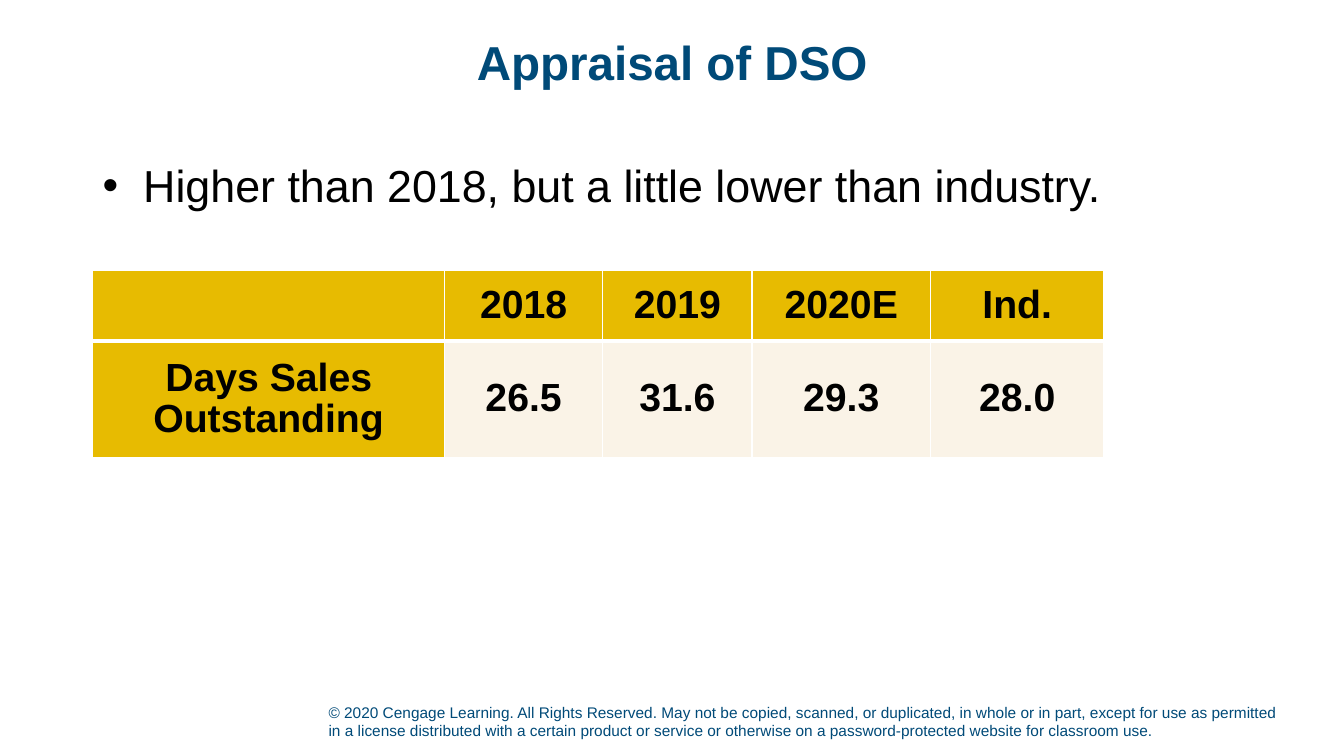
from dataclasses import dataclass

from lxml.etree import SubElement
from pptx import Presentation
from pptx.dml.color import RGBColor
from pptx.enum.text import MSO_ANCHOR as Anchor, PP_ALIGN as Align
from pptx.oxml.ns import qn
from pptx.util import Cm, Pt


@dataclass(frozen=True)
class Theme:
    font: str = "Arial"
    blue: str = "004A78"
    black: str = "000000"
    white: str = "FFFFFF"
    gold: str = "E7BB01"
    cream: str = "FAF3E7"
    title_size: int = 34
    body_size: int = 32
    table_size: int = 28
    footer_size: int = 11
    thin_border: int = 1
    header_border: int = 3


THEME = Theme()
MARGIN = 2.34
CONTENT_WIDTH = 29.21

COLUMN_WIDTHS = [8.86, 3.99, 3.76, 4.5, 4.37]
ROW_HEIGHTS = [1.78, 2.95]
DSO_ROWS = [
    ["", "2018", "2019", "2020E", "Ind."],
    ["Days Sales Outstanding", "26.5", "31.6", "29.3", "28.0"],
]
COPYRIGHT = (
    "© 2020 Cengage Learning. All Rights Reserved. May not be copied, scanned, "
    "or duplicated, in whole or in part, except for use as permitted in a license "
    "distributed with a certain product or service or otherwise on a "
    "password-protected website for classroom use."
)


def add_run(para, text, size, color, bold=False):
    run = para.add_run()
    run.text = text
    run.font.name = THEME.font
    run.font.size = Pt(size)
    run.font.bold = bold
    run.font.color.rgb = RGBColor.from_string(color)


def add_text_box(page, box, anchor):
    """Add a wrapping text box and return its first paragraph."""
    frame = page.shapes.add_textbox(*map(Cm, box)).text_frame
    frame.word_wrap = True
    frame.vertical_anchor = anchor
    return frame.paragraphs[0]


def add_title(page, box):
    para = add_text_box(page, box, Anchor.MIDDLE)
    para.alignment = Align.CENTER
    para.line_spacing = 0.9
    add_run(para, "Appraisal of DSO", THEME.title_size, THEME.blue, bold=True)


def add_bullet_text(page, box):
    para = add_text_box(page, box, Anchor.TOP)
    indent = Cm(1.02)
    properties = para._p.get_or_add_pPr()
    properties.set("marL", str(indent))
    properties.set("indent", str(-indent))
    SubElement(properties, qn("a:buFont"), typeface=THEME.font)
    SubElement(properties, qn("a:buChar"), char="•")
    add_run(para, "Higher than 2018, but a little lower than industry.",
            THEME.body_size, THEME.black)


def set_borders(cell, top, bottom):
    """Draw white cell borders; call before the cell's fill is set."""
    properties = cell._tc.get_or_add_tcPr()
    thin = THEME.thin_border
    for side, width in (("L", thin), ("R", thin), ("T", top), ("B", bottom)):
        line = SubElement(properties, qn(f"a:ln{side}"), w=str(Pt(width)))
        fill = SubElement(line, qn("a:solidFill"))
        SubElement(fill, qn("a:srgbClr"), val=THEME.white)


def fill_cell(cell, text, is_heading, top, bottom):
    set_borders(cell, top, bottom)
    cell.fill.solid()
    cell.fill.fore_color.rgb = RGBColor.from_string(
        THEME.gold if is_heading else THEME.cream)
    cell.vertical_anchor = Anchor.MIDDLE
    cell.margin_left = cell.margin_right = Cm(0.18)
    cell.margin_top = cell.margin_bottom = Cm(0.13 if is_heading else 0)
    if text:
        para = cell.text_frame.paragraphs[0]
        para.alignment = Align.CENTER
        para.line_spacing = 0.95
        add_run(para, text, THEME.table_size, THEME.black, bold=True)


def add_dso_table(page, left, top):
    table = page.shapes.add_table(
        len(ROW_HEIGHTS), len(COLUMN_WIDTHS), Cm(left), Cm(top),
        Cm(sum(COLUMN_WIDTHS)), Cm(sum(ROW_HEIGHTS))).table
    table.horz_banding = False
    for column, width in zip(table.columns, COLUMN_WIDTHS):
        column.width = Cm(width)
    thin, thick = THEME.thin_border, THEME.header_border
    for i, (row, height, texts) in enumerate(zip(table.rows, ROW_HEIGHTS, DSO_ROWS)):
        row.height = Cm(height)
        edges = (thin, thick) if i == 0 else (thick, thin)
        for j, (cell, text) in enumerate(zip(row.cells, texts)):
            fill_cell(cell, text, i == 0 or j == 0, *edges)


def add_footer(page, box):
    para = add_text_box(page, box, Anchor.BOTTOM)
    add_run(para, COPYRIGHT, THEME.footer_size, THEME.blue)


def main():
    deck = Presentation()
    deck.slide_width, deck.slide_height = Cm(33.87), Cm(19.05)
    page = deck.slides.add_slide(deck.slide_layouts[6])
    add_footer(page, (8.03, 17.5, 24.46, 1.27))
    add_title(page, (MARGIN, 0.38, CONTENT_WIDTH, 2.54))
    add_bullet_text(page, (MARGIN, 3.85, CONTENT_WIDTH, 2.15))
    add_dso_table(page, MARGIN, 6.81)
    deck.save("out.pptx")


if __name__ == "__main__":
    main()
